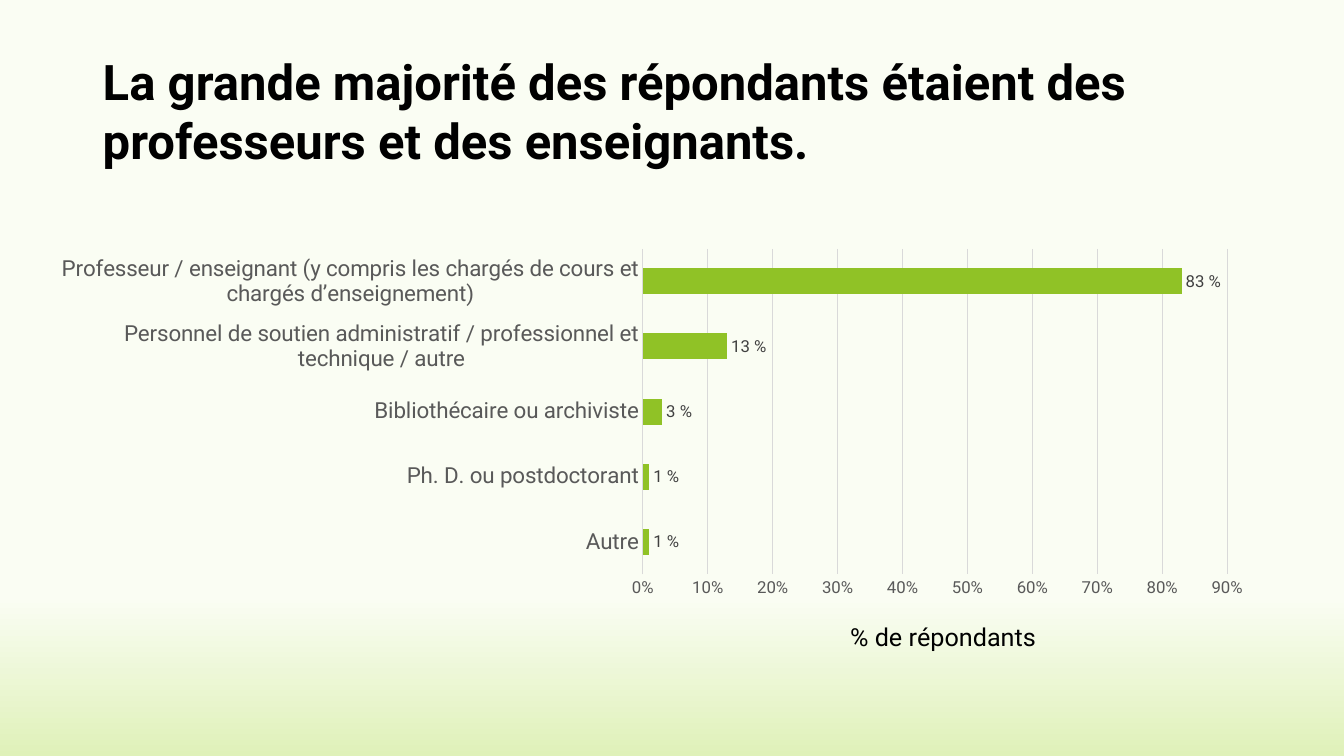
from dataclasses import dataclass

from lxml import etree
from pptx import Presentation
from pptx import util as u
from pptx.chart import data as chart_data
from pptx.dml.color import RGBColor
from pptx.enum import chart as chart_enum, text
from pptx.oxml.ns import qn


# Colours and type sizes
@dataclass(frozen=True)
class Theme:
    font: str = "Roboto"
    ink: str = "000000"
    axis: str = "595959"
    label: str = "404040"
    grid: str = "D9D9D9"
    bar: str = "90C226"
    sky: str = "FAFDF3"
    grass: str = "DFF1B9"
    title_size: float = 35
    caption_size: float = 18
    category_size: float = 16
    small_size: float = 12


@dataclass(frozen=True)
class Area:
    left: float
    top: float
    width: float
    height: float

    def points(self) -> tuple:
        return tuple(u.Pt(n) for n in (self.left, self.top, self.width, self.height))


@dataclass(frozen=True)
class Answer:
    label: str
    share: float


THEME = Theme()
TITLE_AREA = Area(66.2, 30.2, 830.9, 110.9)
CHART_AREA = Area(41.8, 134.6, 851.8, 337)
ANSWERS = [
    Answer("Autre", 0.01),
    Answer("Ph. D. ou postdoctorant", 0.01),
    Answer("Bibliothécaire ou archiviste", 0.03),
    Answer("Personnel de soutien administratif / professionnel et technique / autre", 0.13),
    Answer("Professeur / enseignant (y compris les chargés de cours et "
           "chargés d’enseignement)", 0.83),
]


def style_font(font, size: float, color: str, bold: bool = False) -> None:
    font.name = THEME.font
    font.size = u.Pt(size)
    font.bold = bold
    font.color.rgb = RGBColor.from_string(color)


def write(frame, words: str, *, size: float, color: str, bold: bool = False,
          align=None) -> None:
    para = frame.paragraphs[0]
    para.alignment = align
    span = para.add_run()
    span.text = words
    style_font(span.font, size, color, bold)


def style_line(line, color: str) -> None:
    line.color.rgb = RGBColor.from_string(color)
    line.width = u.Pt(0.75)


def place(element, **settings) -> None:
    """Give a chart part a manual layout, in fractions of the chart."""
    for old in element.findall(qn("c:layout")):
        element.remove(old)
    layout = etree.Element(qn("c:layout"))
    manual = etree.SubElement(layout, qn("c:manualLayout"))
    for name, value in settings.items():
        etree.SubElement(manual, qn(f"c:{name}")).set("val", str(value))
    element.insert(0 if element.find(qn("c:tx")) is None else 1, layout)


def paint_background(page) -> None:
    fill = page.background.fill
    fill.gradient()
    fill.gradient_angle = 270
    stops = ((0.79, THEME.sky), (1, THEME.grass))
    for stop, (position, color) in zip(fill.gradient_stops, stops):
        stop.position = position
        stop.color.rgb = RGBColor.from_string(color)


def add_title(page) -> None:
    box = page.shapes.title
    box.left, box.top, box.width, box.height = TITLE_AREA.points()
    frame = box.text_frame
    frame.word_wrap = True
    frame.auto_size = text.MSO_AUTO_SIZE.NONE
    frame.vertical_anchor = text.MSO_ANCHOR.TOP
    frame.margin_top = u.Pt(6.5)
    write(frame, "La grande majorité des répondants étaient des professeurs et des enseignants.",
          size=THEME.title_size, color=THEME.ink, bold=True, align=text.PP_ALIGN.LEFT)


def add_answers_chart(page) -> None:
    data = chart_data.CategoryChartData(number_format="0%")
    data.categories = [answer.label for answer in ANSWERS]
    data.add_series("Series 1", [answer.share for answer in ANSWERS])
    chart = page.shapes.add_chart(
        chart_enum.XL_CHART_TYPE.BAR_CLUSTERED, *CHART_AREA.points(), data).chart
    style_font(chart.font, 10, THEME.ink)
    chart.has_legend = False

    # Caption under the bars
    chart.has_title = True
    caption = chart.chart_title
    write(caption.text_frame, "% de répondants", size=THEME.caption_size, color=THEME.ink)
    caption.include_in_layout = False
    place(caption._element, xMode="edge", yMode="edge", x=0.66, y=0.92)

    # Axes
    categories, values = chart.category_axis, chart.value_axis
    for axis, size in ((categories, THEME.category_size), (values, THEME.small_size)):
        axis.major_tick_mark = axis.minor_tick_mark = chart_enum.XL_TICK_MARK.NONE
        style_font(axis.tick_labels.font, size, THEME.axis)
    style_line(categories.format.line, THEME.grid)
    values.minimum_scale, values.maximum_scale, values.major_unit = 0, 0.9, 0.1
    values.tick_labels.number_format = "0%"
    values.tick_labels.number_format_is_linked = False
    values.format.line.fill.background()
    values.has_major_gridlines = True
    style_line(values.major_gridlines.format.line, THEME.grid)

    # Bars and their labels
    plot = chart.plots[0]
    plot.gap_width = 150
    plot.vary_by_categories = False
    bars = plot.series[0]
    bars.format.fill.solid()
    bars.format.fill.fore_color.rgb = RGBColor.from_string(THEME.bar)
    labels = bars.data_labels
    labels.show_value = True
    labels.number_format = "0\\ %"
    labels.number_format_is_linked = False
    labels.position = chart_enum.XL_LABEL_POSITION.OUTSIDE_END
    style_font(labels.font, THEME.small_size, THEME.label)
    place(plot._element.getparent(), layoutTarget="inner", xMode="edge", yMode="edge",
          x=0.49, y=0.13, w=0.49, h=0.7)


def main() -> None:
    deck = Presentation()
    deck.slide_width, deck.slide_height = u.Pt(960), u.Pt(540)
    page = deck.slides.add_slide(deck.slide_layouts[5])
    paint_background(page)
    add_title(page)
    add_answers_chart(page)
    deck.save("out.pptx")


if __name__ == "__main__":
    main()
